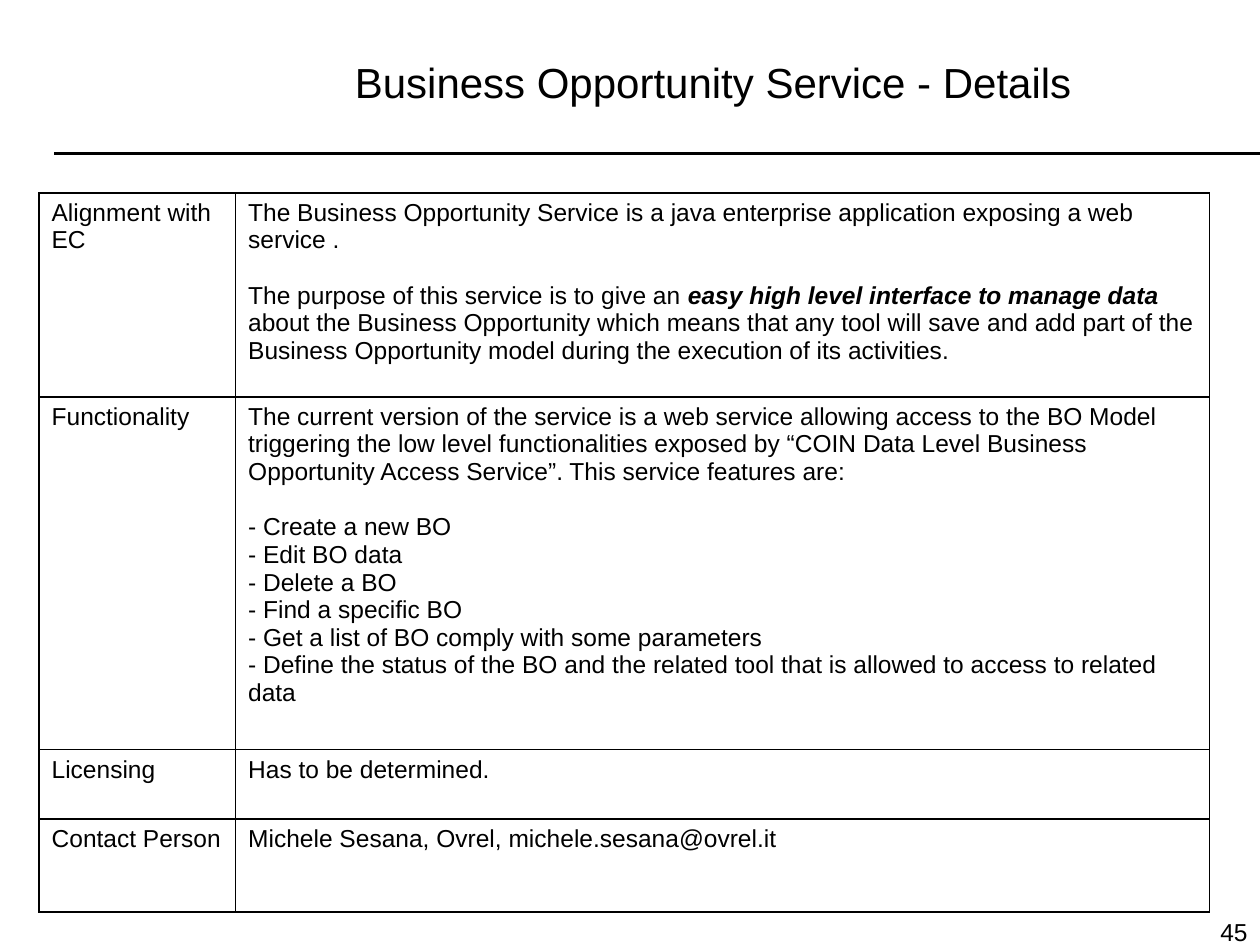
"""Build the details slide of the Business Opportunity Service."""
from lxml.etree import SubElement
from pptx import Presentation
from pptx.dml.color import RGBColor
from pptx.enum.shapes import MSO_CONNECTOR as Link
from pptx.enum.text import MSO_ANCHOR as Anchor, PP_ALIGN as Align
from pptx.oxml import parse_xml
from pptx.oxml.ns import nsdecls, qn
from pptx.util import Inches, Pt

BLACK = RGBColor(0, 0, 0)
ROWS = [
    (1.62, "Alignment with EC", [
        [("The Business Opportunity Service is a java enterprise application "
          "exposing a web service .", False)],
        [("The purpose of this service is to give an ", False),
         ("easy high level interface to manage data ", True),
         ("about the Business Opportunity which means that any tool will save "
          "and add part of the Business Opportunity model during the execution "
          "of its activities.", False)]]),
    (2.8, "Functionality", [
        [("The current version of the service is a web service allowing access "
          "to the BO Model triggering the low level functionalities exposed by "
          "“COIN Data Level Business Opportunity Access Service”. This service "
          "features are:", False)],
        [("- Create a new BO", False)],
        [("- Edit BO data", False)],
        [("- Delete a BO", False)],
        [("- Find a specific BO", False)],
        [("- Get a list of BO comply with some parameters", False)],
        [("- Define the status of the BO and the related tool that is allowed "
          "to access to related data", False)]]),
    (0.55, "Licensing", [[("Has to be determined.", False)]]),
    (0.74, "Contact Person",
     [[("Michele Sesana, Ovrel, michele.sesana@ovrel.it", False)]]),
]


def add_run(para, text, size, strong=False):
    run = para.add_run()
    run.text = text
    font = run.font
    font.name, font.size = "Arial", Pt(size)
    font.color.rgb = BLACK
    font.bold = font.italic = strong


def add_frame(cell):
    props = cell._tc.get_or_add_tcPr()
    for side in ("lnL", "lnR", "lnT", "lnB"):
        props.append(parse_xml(
            f'<a:{side} {nsdecls("a")} w="{Pt(1)}"><a:solidFill>'
            f'<a:srgbClr val="{BLACK}"/></a:solidFill></a:{side}>'))
    cell.fill.background()


deck = Presentation()
deck.slide_width, deck.slide_height = wide, high = Inches(10), Inches(7.5)
slide = deck.slides.add_slide(deck.slide_layouts[5])

rule = slide.shapes.add_connector(
    Link.STRAIGHT, Inches(0.43), Inches(1.22), wide, Inches(1.22))
rule.line.color.rgb = BLACK
rule.line.width = Pt(1.75)
SubElement(rule._element.spPr, qn("a:effectLst"))

title = slide.shapes.title
title.left, title.top = Inches(1.16), Inches(0.16)
title.width, title.height = Inches(9), Inches(0.98)
title.text_frame.vertical_anchor = Anchor.MIDDLE
head = title.text_frame.paragraphs[0]
head.alignment = Align.CENTER
add_run(head, "Business Opportunity Service - Details", 24)

left = Inches(7.67)
top = Inches(7.23)
page = slide.shapes.add_textbox(left, top, wide - left, high - top)
page.text_frame.word_wrap = True
num = page.text_frame.paragraphs[0]
num.alignment = Align.RIGHT
add_run(num, "45", 14)

cols = [Inches(1.56), Inches(7.73)]
tall = [Inches(row[0]) for row in ROWS]
grid = slide.shapes.add_table(
    len(ROWS), len(cols), Inches(0.31), Inches(1.53), sum(cols), sum(tall)).table
grid.first_row = grid.horz_banding = False
for col, width in zip(grid.columns, cols):
    col.width = width

for i, (_, label, paras) in enumerate(ROWS):
    grid.rows[i].height = tall[i]
    name, info = grid.cell(i, 0), grid.cell(i, 1)
    add_frame(name)
    add_frame(info)
    add_run(name.text_frame.paragraphs[0], label, 14)
    for j, runs in enumerate(paras):
        frame = info.text_frame
        para = frame.add_paragraph() if j else frame.paragraphs[0]
        if j == 1:
            para.space_before = Pt(16)
        for text, strong in runs:
            add_run(para, text, 14, strong)

deck.save("out.pptx")
